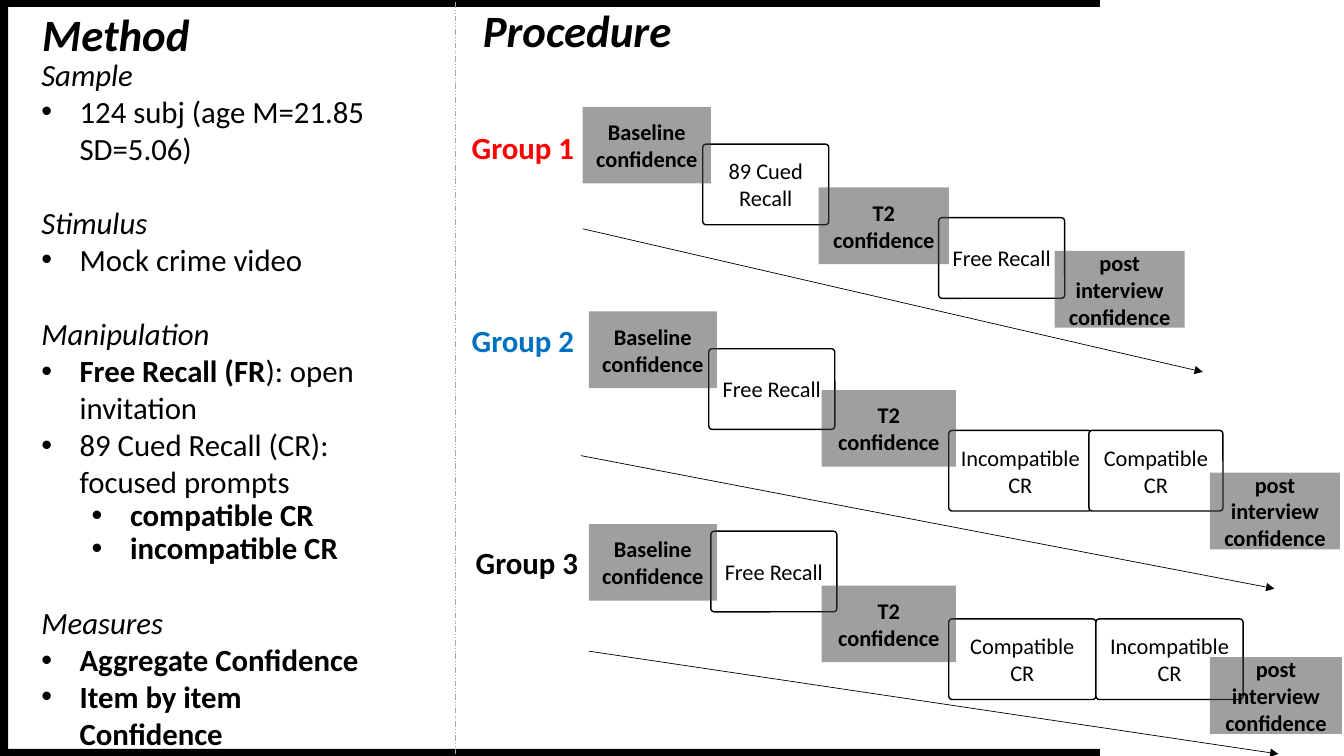
import pptx
import pptx.dml.color
import pptx.enum.dml
import pptx.enum.shapes
import pptx.enum.text
import pptx.oxml
import pptx.oxml.ns
import pptx.util

Inches = pptx.util.Inches
SHAPES = pptx.enum.shapes.MSO_SHAPE
ALIGN = pptx.enum.text.PP_ALIGN
ANCHOR = pptx.enum.text.MSO_ANCHOR
COLORS = {
    "black": "000000", "white": "FFFFFF", "gray": "404040",
    "divider": "A6A6A6", "red": "FF0000", "blue": "0070C0",
}
GROUPS = [
    {"label": ("Group 1", 4.58, 1.23, "red"),
     "arrow": (5.78, 2.27, 11.93, 3.69),
     "recalls": [("89 Cued Recall", 6.97, 1.43, 1.25), ("Free Recall", 9.31, 2.16, 1.25)],
     "ratings": [("Baseline confidence", 5.78, 1.06, 1.27), ("T2 confidence", 8.12, 1.86, 1.29),
                 ("post interview confidence", 10.46, 2.49, 1.29)]},
    {"label": ("Group 2", 4.58, 3.14, "blue"),
     "arrow": (5.76, 4.52, 12.64, 5.84),
     "recalls": [("Free Recall", 7.03, 3.46, 1.25), ("Incompatible CR", 9.41, 4.27, 1.42),
                 ("Compatible CR", 10.8, 4.27, 1.33)],
     "ratings": [("Baseline confidence", 5.84, 3.09, 1.27), ("T2 confidence", 8.15, 3.87, 1.33),
                 ("post interview confidence", 12, 4.69, 1.29)]},
    {"label": ("Group 3", 4.62, 5.35, "black"),
     "arrow": (5.84, 6.46, 12.68, 7.48),
     "recalls": [("Free Recall", 7.05, 5.27, 1.25), ("Compatible CR", 9.41, 6.14, 1.46),
                 ("Incompatible CR", 10.87, 6.14, 1.46)],
     "ratings": [("Baseline confidence", 5.84, 5.2, 1.27), ("T2 confidence", 8.15, 5.81, 1.33),
                 ("post interview confidence", 12, 6.52, 1.31)]},
]
METHOD = [
    ("heading", [("Sample", False)]),
    ("bullet", [("124 subj (age M=21.85 SD=5.06)", False)]),
    ("heading", [("Stimulus", False)]),
    ("bullet", [("Mock crime video", False)]),
    ("heading", [("Manipulation", False)]),
    ("bullet", [("Free Recall (FR", True), ("): open invitation", False)]),
    ("bullet", [("89 Cued Recall (CR): focused prompts", False)]),
    ("subbullet", [("compatible CR", True)]),
    ("subbullet", [("incompatible CR", True)]),
    ("heading", [("Measures", False)]),
    ("bullet", [("Aggregate Confidence", True)]),
    ("bullet", [("Item by item Confidence", True)]),
]
MARGINS = {"bullet": 0.38, "subbullet": 0.88}


def rgb(name):
    return pptx.dml.color.RGBColor.from_string(COLORS[name])


def add_element(parent, tag, **attributes):
    element = pptx.oxml.parse_xml(f"<{tag} {pptx.oxml.ns.nsdecls('a')}/>")
    for name, value in attributes.items():
        element.set(name, value)
    parent.append(element)
    return element


def write_text(paragraph, text, size=16, color="black", bold=False, italic=False):
    run = paragraph.add_run()
    run.text = text
    run.font.name = "Calibri"
    run.font.size = pptx.util.Pt(size)
    run.font.bold = bold
    run.font.italic = italic
    run.font.color.rgb = rgb(color)


class SlideBuilder:
    def __init__(self, slide):
        self.slide = slide

    def block(self, kind, left, top, width, height, fill):
        shape = self.slide.shapes.add_shape(
            kind, Inches(left), Inches(top), Inches(width), Inches(height))
        shape.shadow.inherit = False
        shape.fill.solid()
        shape.fill.fore_color.rgb = rgb(fill)
        shape.line.fill.background()
        return shape

    def step(self, text, left, top, width, rating=False):
        shape = self.block(SHAPES.ROUNDED_RECTANGLE, left, top, width,
                           0.76 if rating else 0.8, "gray" if rating else "white")
        shape.adjustments[0] = 0 if rating else 0.042
        if rating:
            color = shape.fill._xPr.find(".//" + pptx.oxml.ns.qn("a:srgbClr"))
            add_element(color, "a:alpha", val="50000")
        else:
            shape.line.color.rgb = rgb("black")
            shape.line.width = pptx.util.Pt(1)
        shape.text_frame.word_wrap = True
        shape.text_frame.vertical_anchor = ANCHOR.MIDDLE
        paragraph = shape.text_frame.paragraphs[0]
        paragraph.alignment = ALIGN.CENTER
        write_text(paragraph, text, bold=rating)

    def line(self, start_x, start_y, end_x, end_y, color="black", arrow=False):
        connector = self.slide.shapes.add_connector(
            pptx.enum.shapes.MSO_CONNECTOR.STRAIGHT,
            Inches(start_x), Inches(start_y), Inches(end_x), Inches(end_y))
        connector.line.color.rgb = rgb(color)
        connector.line.width = pptx.util.Pt(0.5)
        if arrow:
            add_element(connector.line._get_or_add_ln(), "a:tailEnd", type="triangle")
        add_element(connector._element.spPr, "a:effectLst")
        return connector

    def label(self, text, left, top, width, height, **text_format):
        box = self.slide.shapes.add_textbox(
            Inches(left), Inches(top), Inches(width), Inches(height))
        box.text_frame.word_wrap = True
        box.text_frame.auto_size = pptx.enum.text.MSO_AUTO_SIZE.SHAPE_TO_FIT_TEXT
        write_text(box.text_frame.paragraphs[0], text, bold=True, **text_format)

    def outline(self, entries):
        shape = self.block(SHAPES.RECTANGLE, 0.13, 0.22, 3.62, 7.15, "white")
        frame = shape.text_frame
        frame.word_wrap = True
        frame.vertical_anchor = ANCHOR.TOP
        frame.margin_left, frame.margin_top = Inches(0.28), Inches(0.33)
        frame.margin_right = frame.margin_bottom = 0
        for index, (kind, runs) in enumerate(entries):
            paragraph = frame.add_paragraph() if index else frame.paragraphs[0]
            paragraph.alignment = ALIGN.LEFT
            if kind == "heading":
                paragraph.space_before = pptx.util.Pt(26.8 if index else 0)
            else:
                if kind == "subbullet":
                    paragraph.level = 1
                    paragraph.line_spacing = 0.9
                properties = paragraph._p.get_or_add_pPr()
                properties.set("marL", str(Inches(MARGINS[kind])))
                properties.set("indent", str(Inches(-0.38)))
                add_element(properties, "a:buFont", typeface="Arial")
                add_element(properties, "a:buChar", char="•")
            for text, bold in runs:
                write_text(paragraph, text, size=22, bold=bold, italic=kind == "heading")


def main():
    presentation = pptx.Presentation()
    presentation.slide_width = Inches(13.33)
    presentation.slide_height = Inches(7.5)
    builder = SlideBuilder(presentation.slides.add_slide(presentation.slide_layouts[6]))

    for frame_bar in [(0, 7.43, 10.91, 0.07), (0, 0, 10.91, 0.07), (0, 0.03, 0.08, 7.47)]:
        builder.block(SHAPES.RECTANGLE, *frame_bar, "black")
    builder.outline(METHOD)
    divider = builder.line(4.52, 0.02, 4.52, 7.5, color="divider")
    divider.line.dash_style = pptx.enum.dml.MSO_LINE.DASH_DOT_DOT
    for title, left, top in [("Method", 0.32, 0.02), ("Procedure", 4.69, -0.02)]:
        builder.label(title, left, top, 3.05, 0.64, size=32, italic=True)

    for group in GROUPS:
        name, left, top, color = group["label"]
        builder.label(name, left, top, 1.61, 0.47, size=22, color=color)
        for recall in group["recalls"]:
            builder.step(*recall)
        builder.line(*group["arrow"], arrow=True)
        for rating in group["ratings"]:
            builder.step(*rating, rating=True)

    presentation.save("out.pptx")


if __name__ == "__main__":
    main()
